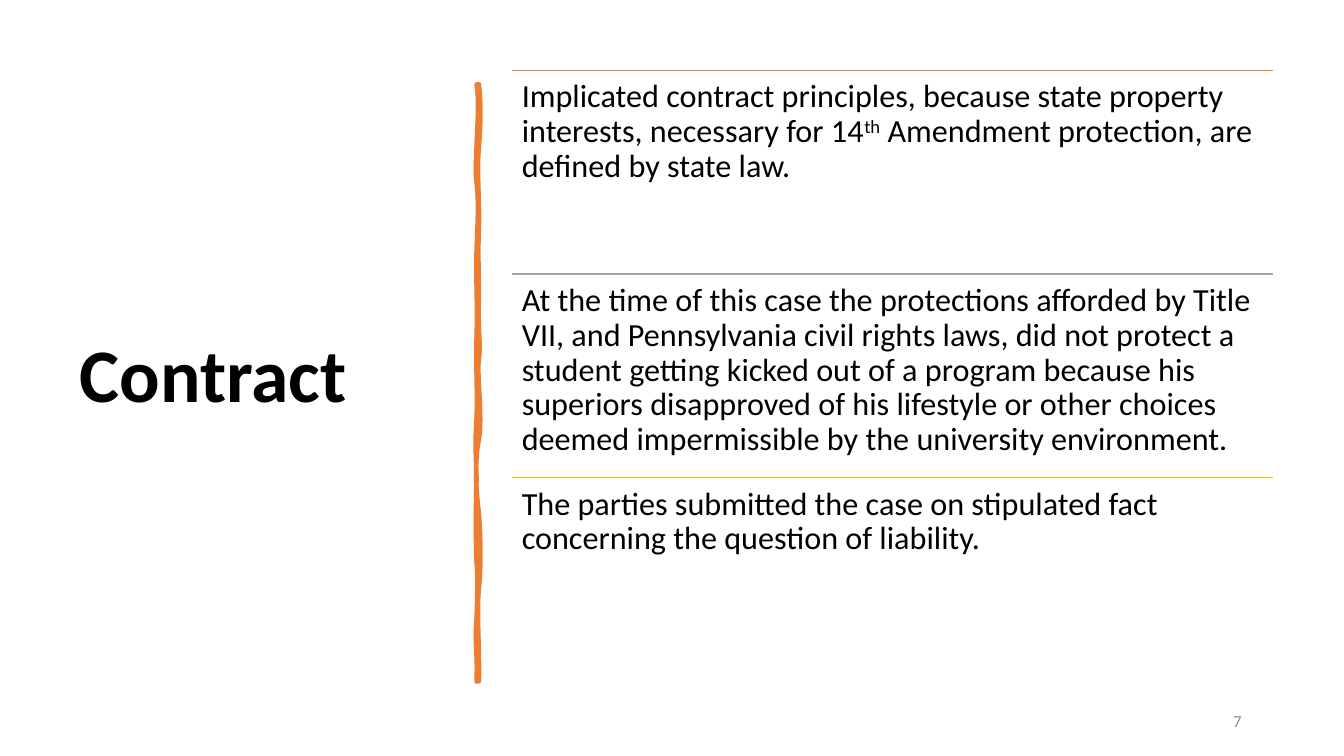
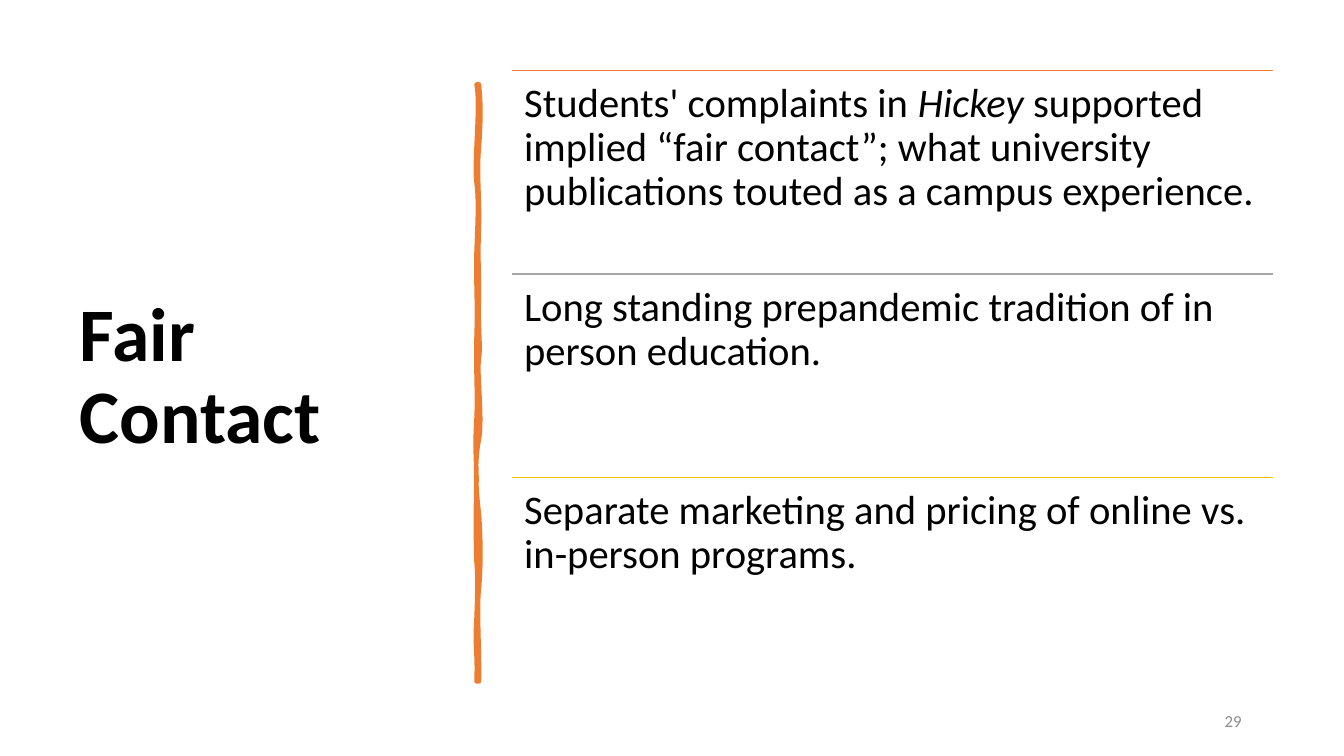
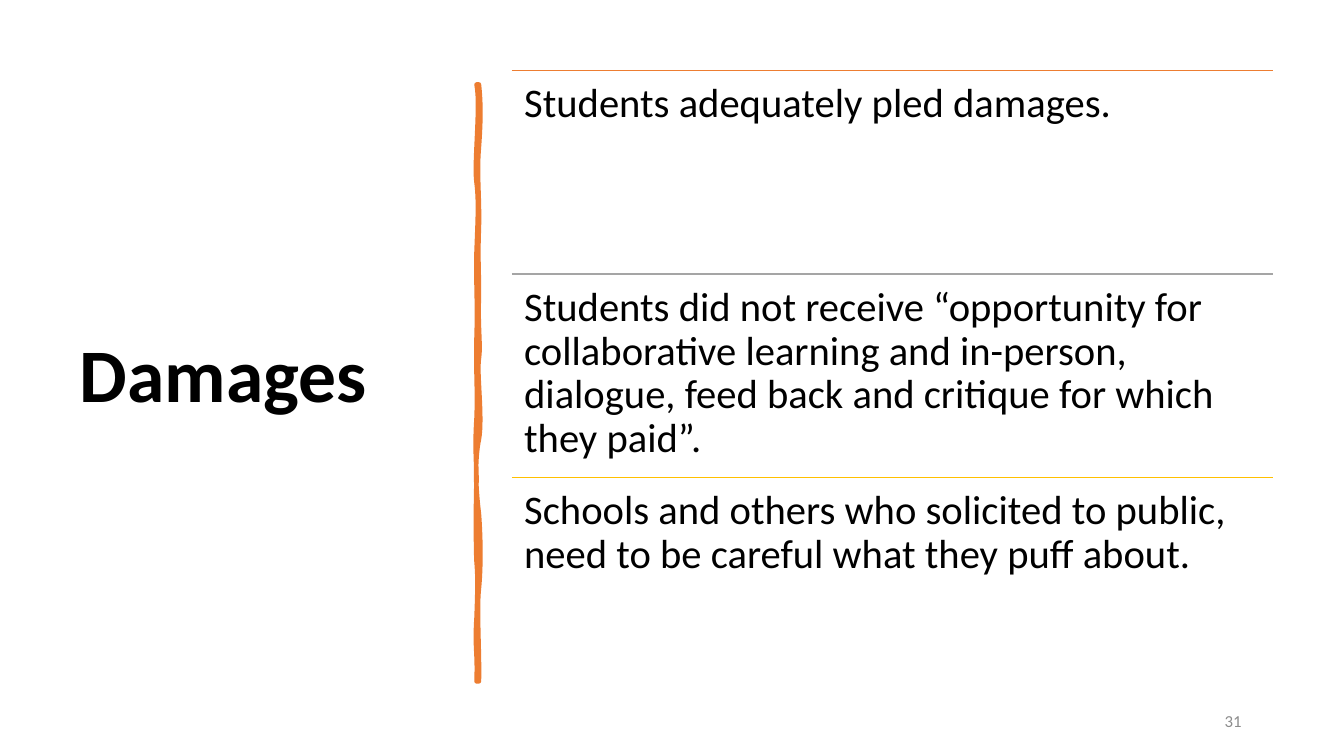
import pptx
import pptx.util
import pptx.dml.color
import pptx.enum.text
import pptx.enum.shapes
import pptx.oxml.ns
import lxml.etree

Cm = pptx.util.Cm
Pt = pptx.util.Pt
qn = pptx.oxml.ns.qn
ANCHOR = pptx.enum.text.MSO_ANCHOR
ALIGN = pptx.enum.text.PP_ALIGN

SLIDES = [
    {
        "title": "Contract", "page": "7", "size": 23, "inset": 0.25,
        "items": [
            [("Implicated contract principles, because state property interests, "
              "necessary for 14", ""), ("th", "super"),
             (" Amendment protection, are defined by state law.", "")],
            [("At the time of this case the protections afforded by Title VII, and "
              "Pennsylvania civil rights laws, did not protect a student getting "
              "kicked out of a program because his superiors disapproved of his "
              "lifestyle or other choices deemed impermissible by the university "
              "environment.", "")],
            [("The parties submitted the case on stipulated fact concerning the "
              "question of liability.", "")],
        ],
    },
    {
        "title": "Fair Contact", "page": "29", "size": 29, "inset": 0.31,
        "items": [
            [("Students' complaints in ", ""), ("Hickey ", "italic"),
             ("supported implied “fair contact”; what university publications "
              "touted as a campus experience.", "")],
            [("Long standing prepandemic tradition of in person education.", "")],
            [("Separate marketing and pricing of online vs. in-person programs.", "")],
        ],
    },
    {
        "title": "Damages", "page": "31", "size": 29, "inset": 0.31,
        "items": [
            [("Students adequately pled damages.", "")],
            [("Students did not receive “opportunity for collaborative learning and "
              "in-person, dialogue, feed back and critique for which they paid”.", "")],
            [("Schools and others who solicited to public, need to be careful what "
              "they puff about.", "")],
        ],
    },
]

FONT = "Calibri"
BLACK, GREY, ORANGE = "000000", "8C8C8C", "ED7D31"
RULES = [ORANGE, "A5A5A5", "FFC000"]
TITLE = (1.76, 1.77, 9.5, 15.5)
PAGE = (23.92, 17.65, 7.62, 1.02)
LEFT, TOP, WIDTH, STEP = 12.9, 1.77, 19.18, 5.13

START = (12.07, 2.13)
CURVES = [
    ((12.12, 2.59), (12.12, 3.02), (12.07, 3.71)),
    ((12.01, 4.39), (12.09, 4.95), (12.07, 5.74)),
    ((12.04, 6.53), (12.07, 6.65), (12.07, 7.47)),
    ((12.04, 8.26), (12.12, 8.69), (12.07, 9.04)),
    ((12.01, 9.4), (12.17, 10.52), (12.07, 11.07)),
    ((11.96, 11.61), (11.99, 12.29), (12.07, 12.95)),
    ((12.12, 13.61), (12.12, 14.33), (12.07, 14.83)),
    ((12.01, 15.32), (12.09, 16.51), (12.07, 17.17)),
    ((12.04, 17.17), (12.01, 17.17), (12.01, 17.17)),
    ((12.04, 16.41), (11.96, 16.36), (12.01, 15.57)),
    ((12.04, 14.81), (12.04, 14.48), (12.01, 14.15)),
    ((11.99, 13.82), (11.99, 12.57), (12.01, 12.12)),
    ((12.01, 11.66), (11.96, 11.3), (12.01, 10.54)),
    ((12.04, 9.8), (11.99, 9.47), (12.01, 8.51)),
    ((12.04, 7.57), (11.99, 7.14), (12.01, 6.35)),
    ((12.04, 5.54), (12.07, 5.08), (12.01, 4.6)),
    ((11.94, 4.14), (12.12, 2.64), (12.01, 2.13)),
]


def tint(code):
    return pptx.dml.color.RGBColor.from_string(code)


def assign(target, values):
    for name, value in values.items():
        setattr(target, name, value)


def tag(parent, name):
    return lxml.etree.SubElement(parent, qn(name))


def write(slide, box, runs, size, color=BLACK, bold=False, frame=None, para=None):
    text = slide.shapes.add_textbox(*map(Cm, box)).text_frame
    assign(text, {"word_wrap": True, **(frame or {})})
    line = text.paragraphs[0]
    assign(line, para or {})
    for words, style in runs:
        run = line.add_run()
        run.text = words
        assign(run.font, {"name": FONT, "size": Pt(size), "bold": bold,
                          "italic": style == "italic"})
        run.font.color.rgb = tint(color)
        if style == "super":
            run._r.get_or_add_rPr().set("baseline", "30000")


def bend(shape):
    legs = list(shape._element.iter(qn("a:lnTo")))
    for one, two, end in zip(legs[::3], legs[1::3], legs[2::3]):
        arc = lxml.etree.Element(qn("a:cubicBezTo"))
        one.addprevious(arc)
        for leg in (one, two, end):
            arc.append(leg[0])
            leg.getparent().remove(leg)


def brush(slide):
    pen = slide.shapes.build_freeform(*map(Cm, START))
    pen.add_line_segments([(Cm(x), Cm(y)) for arc in CURVES for x, y in arc])
    shape = pen.convert_to_shape()
    bend(shape)
    shape.shadow.inherit = False
    shape.fill.solid()
    shape.fill.fore_color.rgb = tint(ORANGE)
    shape.line.color.rgb = tint(ORANGE)
    shape.line.width = Pt(3.25)
    tag(shape.line._get_or_add_ln(), "a:round")


def rule(slide, top, color):
    line = slide.shapes.add_connector(
        pptx.enum.shapes.MSO_CONNECTOR.STRAIGHT,
        Cm(LEFT), Cm(top), Cm(LEFT + WIDTH), Cm(top))
    line.line.color.rgb = tint(color)
    line.line.width = Pt(1)
    tag(line._element.spPr, "a:effectLst")


def build(deck, data):
    slide = deck.slides.add_slide(deck.slide_layouts[6])
    middle = {"vertical_anchor": ANCHOR.MIDDLE}
    write(slide, TITLE, [(data["title"], "")], 54, bold=True, frame=middle,
          para={"line_spacing": 0.9})
    brush(slide)
    write(slide, PAGE, [(data["page"], "")], 12, GREY, frame=middle,
          para={"alignment": ALIGN.RIGHT})
    sides = ("left", "top", "right", "bottom")
    inset = {f"margin_{side}": Cm(data["inset"]) for side in sides}
    for row, (runs, color) in enumerate(zip(data["items"], RULES)):
        top = TOP + row * STEP
        rule(slide, top, color)
        write(slide, (LEFT, top, WIDTH, STEP), runs, data["size"], frame=inset,
              para={"line_spacing": 0.9})


def main():
    deck = pptx.Presentation()
    assign(deck, {"slide_width": Cm(33.87), "slide_height": Cm(19.05)})
    for data in SLIDES:
        build(deck, data)
    deck.save("out.pptx")


if __name__ == "__main__":
    main()
